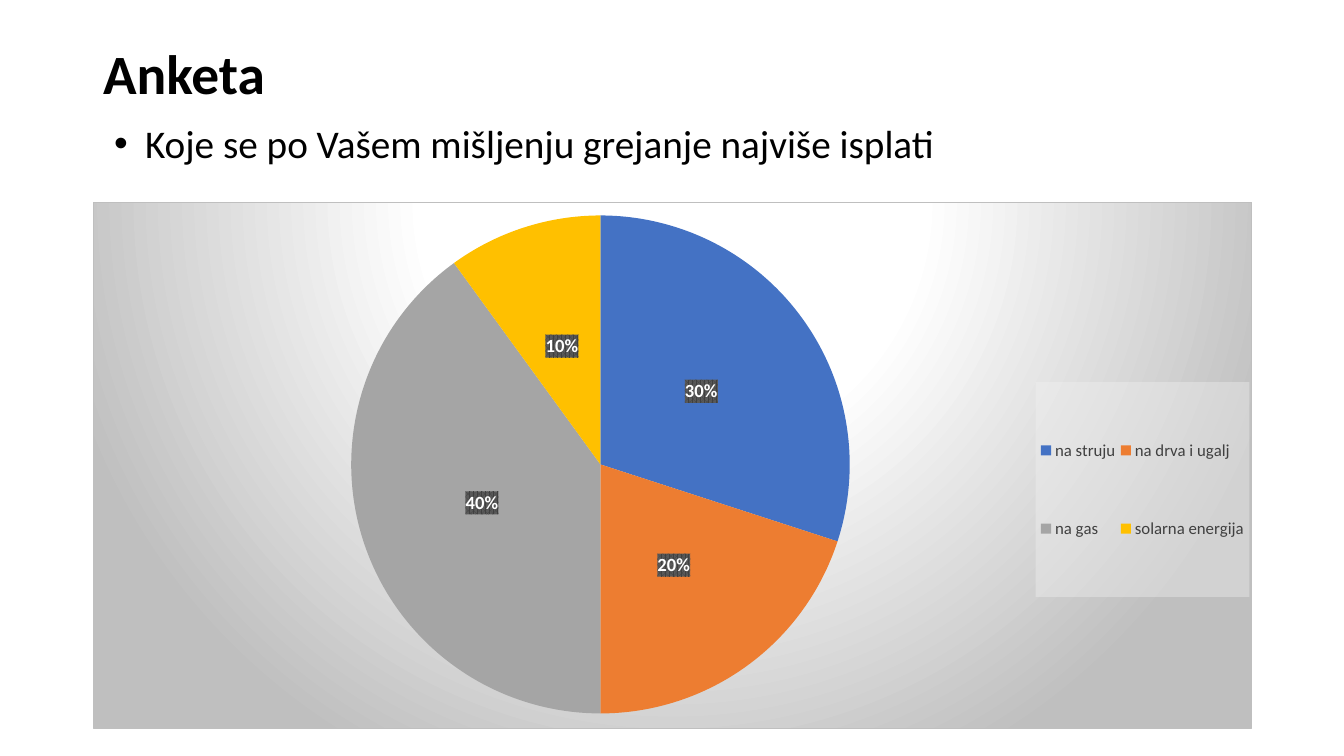
import pptx
import pptx.chart.data
import pptx.dml.color
import pptx.enum.chart
import pptx.enum.text
import pptx.oxml
import pptx.oxml.ns
import pptx.util

PX = 914400 / 100.8
FONT = "Calibri"
COLORS = {
    "text": "000000", "legend_text": "404040", "label_text": "FFFFFF",
    "center": "FFFFFF", "edge": "BFBFBF", "legend": "F2F2F2",
    "label_front": "404040", "label_back": "595959",
}
ANSWERS = [
    ("na struju", 30, "4472C4"),
    ("na drva i ugalj", 20, "ED7D31"),
    ("na gas", 40, "A5A5A5"),
    ("solarna energija", 10, "FFC000"),
]


def px(n):
    return pptx.util.Emu(round(n * PX))


def rgb(value):
    return pptx.dml.color.RGBColor.from_string(value)


def style(font, size, color, bold=False):
    font.name = FONT
    font.size = pptx.util.Pt(size)
    font.bold = bold
    font.color.rgb = rgb(color)


def chart_xml(tag, content):
    return pptx.oxml.parse_xml(
        f'<c:{tag} {pptx.oxml.ns.nsdecls("c", "a")}>{content}</c:{tag}>')


def color_xml(name, inner=""):
    return f'<a:srgbClr val="{COLORS[name]}">{inner}</a:srgbClr>'


def set_background(element, content):
    """Give a chart part its shape properties, just before its text properties."""
    element.find(pptx.oxml.ns.qn("c:txPr")).addprevious(chart_xml("spPr", content))


def set_layout(element, index, frame, box, target=""):
    """Place a chart part at a px box, as fractions of the chart frame."""
    for old in element.findall(pptx.oxml.ns.qn("c:layout")):
        element.remove(old)
    left, top, width, height = frame
    x, y, w, h = box
    parts = {"x": (x - left) / width, "y": (y - top) / height,
             "w": w / width, "h": h / height}
    content = target + '<c:xMode val="edge"/><c:yMode val="edge"/>'
    content += "".join(f'<c:{k} val="{v:.4f}"/>' for k, v in parts.items())
    element.insert(index, chart_xml(
        "layout", f"<c:manualLayout>{content}</c:manualLayout>"))


def fill_placeholder(sp, box, text, size, bold=False):
    sp.left, sp.top, sp.width, sp.height = map(px, box)
    tf = sp.text_frame
    tf.text = text
    tf.word_wrap = True
    tf.auto_size = pptx.enum.text.MSO_AUTO_SIZE.NONE
    p = tf.paragraphs[0]
    p.alignment = pptx.enum.text.PP_ALIGN.LEFT
    p.space_before = pptx.util.Pt(0)
    style(p.runs[0].font, size, COLORS["text"], bold)
    return tf


def set_bullet(p, indent):
    pPr = p._p.get_or_add_pPr()
    pPr.set("marL", str(px(indent)))
    pPr.set("indent", str(-px(indent)))
    for tag, name, value in (("buFont", "typeface", "Arial"), ("buChar", "char", "•")):
        pPr.append(pptx.oxml.parse_xml(
            f'<a:{tag} {pptx.oxml.ns.nsdecls("a")} {name}="{value}"/>'))


def add_pie(s, frame, plot_box, legend_box):
    data = pptx.chart.data.CategoryChartData()
    data.categories = [name for name, _, _ in ANSWERS]
    data.add_series("Series 1", [value for _, value, _ in ANSWERS])
    chart = s.shapes.add_chart(
        pptx.enum.chart.XL_CHART_TYPE.PIE, *map(px, frame), data).chart
    chart.has_title = False
    style(chart.font, 10, COLORS["text"])

    # Radial grey background
    stops = "".join(f'<a:gs pos="{pos * 1000}">{color_xml(name)}</a:gs>'
                    for pos, name in ((0, "center"), (39, "center"), (100, "edge")))
    set_background(chart._chartSpace, (
        f'<a:gradFill><a:gsLst>{stops}</a:gsLst><a:path path="circle">'
        '<a:fillToRect l="50000" t="-80000" r="50000" b="180000"/></a:path></a:gradFill>'
        f'<a:ln w="9525"><a:solidFill>{color_xml("edge")}</a:solidFill></a:ln>'))
    set_layout(chart._chartSpace.chart.plotArea, 0, frame, plot_box,
               '<c:layoutTarget val="inner"/>')

    # Slices and percentages
    plot = chart.plots[0]
    plot.vary_by_categories = True
    series = plot.series[0]
    for i, (_, _, color) in enumerate(ANSWERS):
        fill = series.points[i].format.fill
        fill.solid()
        fill.fore_color.rgb = rgb(color)
    labels = series.data_labels
    labels.show_percentage = True
    labels.show_value = False
    labels.number_format = "0%"
    labels.number_format_is_linked = False
    labels.position = pptx.enum.chart.XL_LABEL_POSITION.CENTER
    style(labels.font, 13.3, COLORS["label_text"], True)
    set_background(labels._element, (
        f'<a:pattFill prst="pct75"><a:fgClr>{color_xml("label_front")}</a:fgClr>'
        f'<a:bgClr>{color_xml("label_back")}</a:bgClr></a:pattFill>'))

    # Legend
    chart.has_legend = True
    legend = chart.legend
    legend.position = pptx.enum.chart.XL_LEGEND_POSITION.RIGHT
    legend.include_in_layout = False
    style(legend.font, 12, COLORS["legend_text"])
    set_background(legend._element, "<a:solidFill>" + color_xml(
        "legend", '<a:alpha val="39000"/>') + "</a:solidFill>")
    set_layout(legend._element, 1, frame, legend_box)


def main():
    prs = pptx.Presentation()
    prs.slide_width, prs.slide_height = px(1344), px(756)
    s = prs.slides.add_slide(prs.slide_layouts[1])

    # Title and question
    tf = fill_placeholder(s.shapes.title, (93, 40, 1159, 74), "Anketa", 39.6, True)
    tf.vertical_anchor = pptx.enum.text.MSO_ANCHOR.MIDDLE
    tf.paragraphs[0].line_spacing = 0.9
    tf = fill_placeholder(s.placeholders[1], (104, 114, 1026, 57),
                          "Koje se po Vašem mišljenju grejanje najviše isplati", 28)
    set_bullet(tf.paragraphs[0], 31)

    # Survey results
    add_pie(s, (93, 202, 1159, 527), (351, 215, 499, 499), (1036, 382, 214, 215))
    prs.save("out.pptx")


if __name__ == "__main__":
    main()
